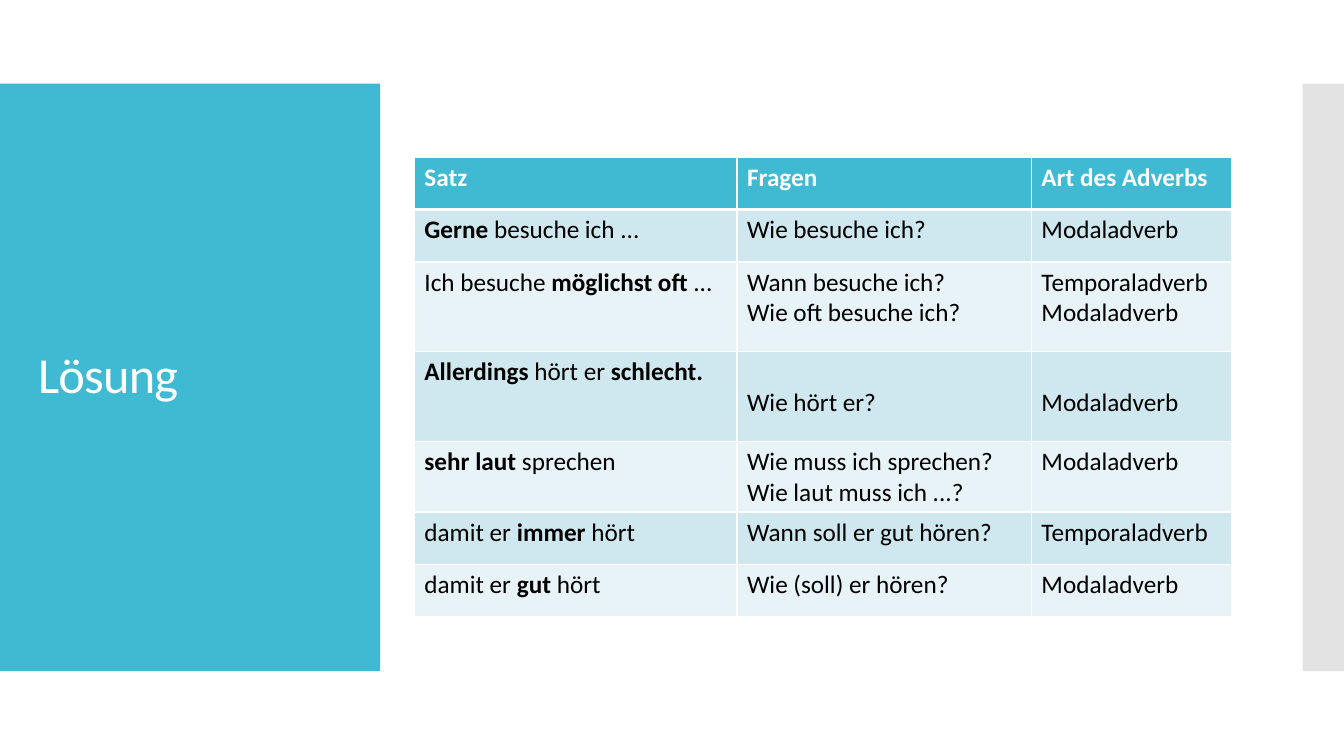
import pptx
import pptx.util
import pptx.dml.color
import pptx.enum.shapes
import pptx.enum.text
import pptx.oxml
import pptx.oxml.ns

Inches = pptx.util.Inches
Pt = pptx.util.Pt
qn = pptx.oxml.ns.qn

TEAL, WHITE, BLACK = "40BAD2", "FFFFFF", "000000"
BANDS = ["E8F3F7", "CFE7EE"]
WIDTHS = [3.2, 2.92, 1.99]
HEIGHTS = [0.52, 0.52, 0.89, 0.89, 0.7, 0.52, 0.52]
LINE = 0.31
# Asterisks enclose bold words.
ROWS = [
    ["*Satz*", "*Fragen*", "*Art des Adverbs*"],
    ["*Gerne* besuche ich ...", "Wie besuche ich?", "Modaladverb"],
    ["Ich besuche *möglichst oft *...",
     "Wann besuche ich?\nWie oft besuche ich?", "Temporaladverb\nModaladverb"],
    ["*Allerdings *hört er *schlecht.*", "Wie hört er?", "Modaladverb"],
    ["*sehr laut *sprechen",
     "Wie muss ich sprechen?\nWie laut muss ich ...?", "Modaladverb"],
    ["damit er *immer *hört", "Wann soll er gut hören?", "Temporaladverb"],
    ["damit er *gut *hört", "Wie (soll) er hören?", "Modaladverb"],
]
LOWERED = [(3, 1), (3, 2)]  # cells whose text starts one line down


def color(code):
    return pptx.dml.color.RGBColor.from_string(code)


def paint(fill, code):
    fill.solid()
    fill.fore_color.rgb = color(code)


def write(para, text, size, code):
    """Add runs to a paragraph, bold between asterisks."""
    for i, part in enumerate(text.split("*")):
        if part:
            run = para.add_run()
            run.text = part
            style = {"name": "Calibri", "size": Pt(size), "bold": i % 2 == 1}
            for key, value in style.items():
                setattr(run.font, key, value)
            run.font.color.rgb = color(code)


def panel(slide, box, code):
    kind = pptx.enum.shapes.MSO_SHAPE.RECTANGLE
    shape = slide.shapes.add_shape(kind, *map(Inches, box))
    shape.shadow.inherit = False
    paint(shape.fill, code)
    shape.line.fill.background()
    return shape


def side(slide, box):
    """Draw the half-transparent strip."""
    shape = panel(slide, box, "C8C8C8")
    tint = shape.fill._xPr.find(".//" + qn("a:srgbClr"))
    pptx.oxml.ns  # namespace helpers
    tint.append(pptx.oxml.parse_xml(
        f'<a:alpha {pptx.oxml.ns.nsdecls("a")} val="50000"/>'))


def title(slide, box, text):
    """Draw the teal panel with its heading."""
    left, top, width, height = box
    panel(slide, box, TEAL)
    area = (left + 0.28, top + 0.4, width - 0.55, height - 0.8)
    frame = slide.shapes.add_textbox(*map(Inches, area)).text_frame
    frame.word_wrap = True
    frame.vertical_anchor = pptx.enum.text.MSO_ANCHOR.MIDDLE
    para = frame.paragraphs[0]
    para.line_spacing = 0.9
    write(para, text, 36, WHITE)
    para.runs[0].font._element.set("spc", "-60")


def border(cell, row):
    """Add white edges, with a thick rule under the header."""
    edges = {"L": 1, "R": 1, "T": 3 if row == 1 else 1, "B": 3 if row == 0 else 1}
    props = cell._tc.get_or_add_tcPr()
    for i, (edge, width) in enumerate(edges.items()):
        props.insert(i, pptx.oxml.parse_xml(
            f'<a:ln{edge} {pptx.oxml.ns.nsdecls("a")} w="{Pt(width)}">'
            f'<a:solidFill><a:srgbClr val="{WHITE}"/></a:solidFill></a:ln{edge}>'))


def grid(slide, left, top):
    area = (left, top, sum(WIDTHS), sum(HEIGHTS))
    table = slide.shapes.add_table(
        len(ROWS), len(WIDTHS), *map(Inches, area)).table
    for col, width in zip(table.columns, WIDTHS):
        col.width = Inches(width)
    for r, texts in enumerate(ROWS):
        table.rows[r].height = Inches(HEIGHTS[r])
        for c, text in enumerate(texts):
            cell = table.cell(r, c)
            paint(cell.fill, BANDS[r % 2] if r else TEAL)
            border(cell, r)
            if (r, c) in LOWERED:
                cell.margin_top = Inches(0.05 + LINE)
            frame = cell.text_frame
            for i, line in enumerate(text.split("\n")):
                para = frame.add_paragraph() if i else frame.paragraphs[0]
                write(para, line, 18, BLACK if r else WHITE)


def main():
    deck = pptx.Presentation()
    deck.slide_width, deck.slide_height = Inches(13.33), Inches(7.5)
    slide = deck.slides.add_slide(deck.slide_layouts[6])
    title(slide, (0, 0.83, 3.77, 5.83), "Lösung")
    side(slide, (12.92, 0.83, 0.41, 5.83))
    grid(slide, 4.11, 1.56)
    deck.save("out.pptx")


if __name__ == "__main__":
    main()
